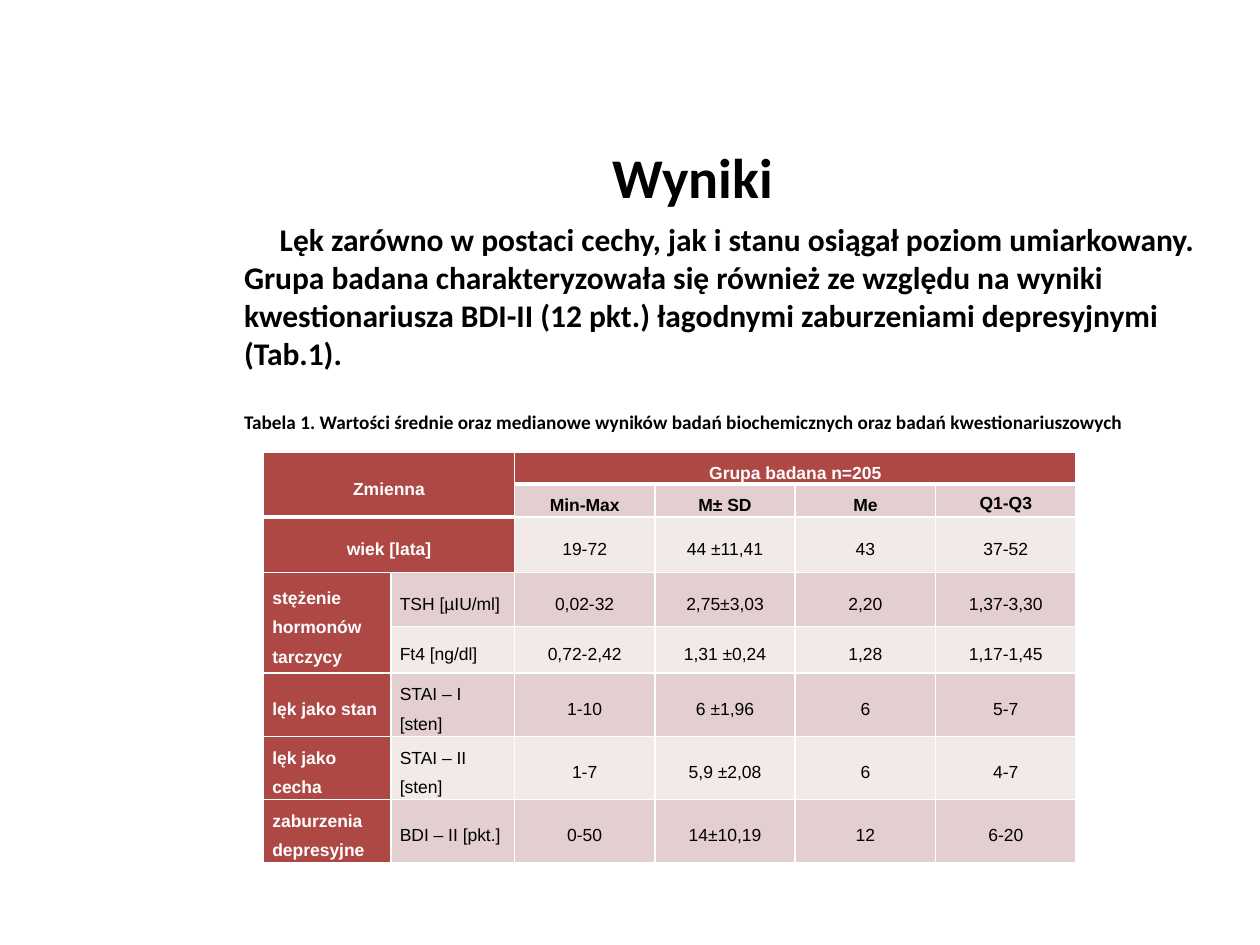
from pptx import Presentation
from pptx.dml.color import RGBColor as Rgb
from pptx.enum.text import MSO_ANCHOR as Anchor, PP_ALIGN as Align
from pptx.oxml import parse_xml
from pptx.oxml.ns import nsdecls
from pptx.util import Cm, Pt

COLORS = {"red": "AE4845", "rose": "E3CFCF", "pale": "F2E9E9", "ink": "000000", "white": "FFFFFF"}
COLS = [2.57, 2.49] + [2.83] * 4
ROWS = [0.64, 0.66, 1.12, 1.09, 0.94, 1.19, 1.22, 1.27]
SPANS = [(0, 0, 1, 1), (0, 2, 0, 5), (2, 0, 2, 1), (3, 0, 4, 0)]
DATA = [
    ["Zmienna", "", "Grupa badana n=205", "", "", ""],
    ["", "", "Min-Max", "M± SD", "Me", "Q1-Q3"],
    ["wiek [lata]", "", "19-72", "44 ±11,41", "43", "37-52"],
    ["stężenie hormonów tarczycy", "TSH [µIU/ml]", "0,02-32", "2,75±3,03", "2,20", "1,37-3,30"],
    ["", "Ft4 [ng/dl]", "0,72-2,42", "1,31 ±0,24", "1,28", "1,17-1,45"],
    ["lęk jako stan", "STAI – I [sten]", "1-10", "6 ±1,96", "6", "5-7"],
    ["lęk jako cecha", "STAI – II [sten]", "1-7", "5,9 ±2,08", "6", "4-7"],
    ["zaburzenia depresyjne", "BDI – II [pkt.]", "0-50", "14±10,19", "12", "6-20"],
]
BODY = (
    "Lęk zarówno w postaci cechy, jak i stanu osiągał poziom umiarkowany. "
    "Grupa badana charakteryzowała się również ze względu na wyniki "
    "kwestionariusza BDI-II (12 pkt.) łagodnymi zaburzeniami depresyjnymi (Tab.1)."
)
NOTE = (
    "Tabela 1. Wartości średnie oraz medianowe wyników badań biochemicznych "
    "oraz badań kwestionariuszowych"
)


def style(para, face, size, color, bold=True):
    for run in para.runs:
        font = run.font
        font.name, font.size, font.bold = face, Pt(size), bold
        font.color.rgb = Rgb.from_string(COLORS[color])


def add_box(slide, box):
    frame = slide.shapes.add_textbox(*map(Cm, box)).text_frame
    frame.word_wrap = True
    return frame


def add_title(slide, box):
    frame = add_box(slide, box)
    frame.vertical_anchor = Anchor.MIDDLE
    frame.text = "Wyniki"
    para = frame.paragraphs[0]
    para.alignment = Align.CENTER
    style(para, "Calibri", 32, "ink")


def add_body(slide, box):
    frame = add_box(slide, box)
    frame.text = BODY
    lead = frame.paragraphs[0]
    lead._p.get_or_add_pPr().set("indent", str(Cm(0.72)))
    style(lead, "Calibri", 18, "ink")
    note = frame.add_paragraph()
    note.text = NOTE
    note.space_before = Pt(22)
    style(note, "Calibri", 11, "ink")


def heavy(row, col):
    return row == (1 if col < 2 else 0)


def add_edges(cell, row, col):
    props = cell._tc.get_or_add_tcPr()
    widths = {"L": 1, "R": 1, "T": 3 if heavy(row - 1, col) else 1, "B": 3 if heavy(row, col) else 1}
    for side, width in widths.items():
        props.append(parse_xml(
            f'<a:ln{side} {nsdecls("a")} w="{Pt(width)}"><a:solidFill>'
            f'<a:srgbClr val="{COLORS["white"]}"/></a:solidFill></a:ln{side}>'
        ))


def fill_cell(cell, row, col):
    dark = row == 0 or col == 0 or (col == 1 and row < 3)
    add_edges(cell, row, col)
    cell.fill.solid()
    tone = "red" if dark else "rose" if row % 2 else "pale"
    cell.fill.fore_color.rgb = Rgb.from_string(COLORS[tone])
    cell.margin_left = cell.margin_right = Cm(0.18)
    cell.margin_top = cell.margin_bottom = 0
    cell.vertical_anchor = Anchor.TOP if (row, col) == (1, 5) else Anchor.MIDDLE
    cell.text_frame.text = DATA[row][col]
    para = cell.text_frame.paragraphs[0]
    para.line_spacing = 1.5
    para.font.size = Pt(10)
    para.alignment = Align.CENTER if row < 3 or col > 1 else Align.LEFT
    style(para, "Arial", 10, "white" if dark else "ink", dark or row == 1)


def add_grid(slide, left, top):
    size = map(Cm, (left, top, sum(COLS), sum(ROWS)))
    table = slide.shapes.add_table(len(ROWS), len(COLS), *size).table
    for col, width in zip(table.columns, COLS):
        col.width = Cm(width)
    for row, height in zip(table.rows, ROWS):
        row.height = Cm(height)
    for row in range(len(ROWS)):
        for col in range(len(COLS)):
            fill_cell(table.cell(row, col), row, col)
    for top_row, first, end_row, last in SPANS:
        table.cell(top_row, first).merge(table.cell(end_row, last))


def main():
    deck = Presentation()
    deck.slide_width, deck.slide_height = Cm(25.4), Cm(19.05)
    slide = deck.slides.add_slide(deck.slide_layouts[6])
    add_title(slide, (2.54, 1.96, 22.86, 3.18))
    add_grid(slide, 5.31, 9.12)
    add_body(slide, (4.67, 4.32, 20.24, 4.57))
    deck.save("out.pptx")


if __name__ == "__main__":
    main()
